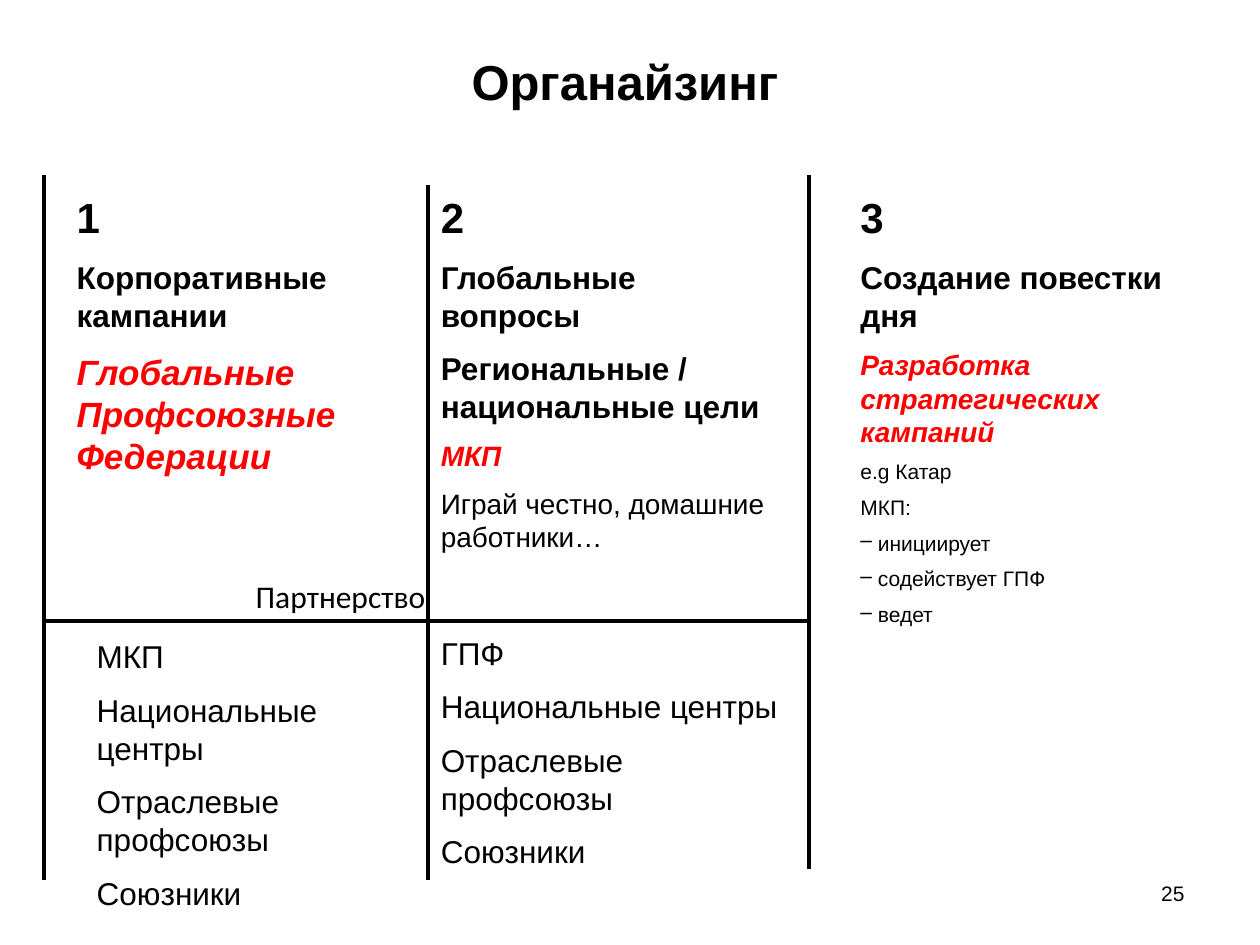
from dataclasses import dataclass

from lxml.etree import SubElement
from pptx import Presentation
from pptx.dml.color import RGBColor
from pptx.enum.shapes import MSO_CONNECTOR
from pptx.enum.text import MSO_ANCHOR, PP_ALIGN
from pptx.oxml.ns import qn
from pptx.util import Pt

COLORS = {"ink": "000000", "accent": "FF0000", "paper": "FFFFFF"}
BULLET_INDENT = 10


@dataclass(frozen=True)
class Line:
    text: str
    size: float
    bold: bool = False
    italic: bool = False
    color: str = "ink"
    bullet: str = ""


@dataclass(frozen=True)
class Block:
    left: float
    top: float
    width: float
    height: float
    lines: tuple[Line, ...]
    font: str = "Arial"
    align: PP_ALIGN = PP_ALIGN.LEFT
    anchor: MSO_ANCHOR = MSO_ANCHOR.TOP
    wrap: bool = True


@dataclass(frozen=True)
class Rule:
    x1: float
    y1: float
    x2: float
    y2: float


def heading(text: str, size: float = 18) -> Line:
    return Line(text, size, bold=True)


def owner(text: str, size: float = 16) -> Line:
    return Line(text, size, bold=True, italic=True, color="accent")


def partners(first: str) -> tuple[Line, ...]:
    names = (first, "Национальные центры", "Отраслевые профсоюзы", "Союзники")
    return tuple(Line(name, 18) for name in names)


def add_bullet(paragraph, char: str) -> None:
    properties = paragraph._p.get_or_add_pPr()
    properties.set("marL", str(Pt(BULLET_INDENT)))
    properties.set("indent", str(-Pt(BULLET_INDENT)))
    SubElement(properties, qn("a:buChar")).set("char", char)


def draw_block(slide, block: Block) -> None:
    box = slide.shapes.add_textbox(
        Pt(block.left), Pt(block.top), Pt(block.width), Pt(block.height))
    frame = box.text_frame
    frame.word_wrap = block.wrap
    frame.vertical_anchor = block.anchor
    for index, line in enumerate(block.lines):
        paragraph = frame.add_paragraph() if index else frame.paragraphs[0]
        paragraph.alignment = block.align
        if index:
            paragraph.space_before = Pt(line.size / 2)
        if line.bullet:
            add_bullet(paragraph, line.bullet)
        run = paragraph.add_run()
        run.text = line.text
        run.font.name = block.font
        run.font.size = Pt(line.size)
        run.font.bold = line.bold
        run.font.italic = line.italic
        run.font.color.rgb = RGBColor.from_string(COLORS[line.color])


def draw_rule(slide, rule: Rule) -> None:
    connector = slide.shapes.add_connector(
        MSO_CONNECTOR.STRAIGHT,
        Pt(rule.x1), Pt(rule.y1), Pt(rule.x2), Pt(rule.y2))
    connector.line.color.rgb = RGBColor.from_string(COLORS["ink"])
    connector.line.width = Pt(2.25)
    SubElement(connector._element.spPr, qn("a:effectLst"))


# Shared grid lines of the columns
COLUMN_TOP = 106
LEFT_EDGE, MIDDLE, RIGHT_EDGE = 25.2, 244.8, 462.2
DIVIDER = 355

TITLE = Block(76.3, 26, 561.6, 41, (heading("Органайзинг", 28),),
              align=PP_ALIGN.CENTER)
PAGE_NUMBER = Block(516.2, 491.8, 167.8, 37.4, (Line("25", 12),),
                    align=PP_ALIGN.RIGHT, anchor=MSO_ANCHOR.MIDDLE)
PARTNERSHIP = Block(139, 326.2, 116.6, 28.8, (Line("Партнерство", 18),),
                    font="Calibri", wrap=False)

CAMPAIGNS = Block(36.7, COLUMN_TOP, 209.5, 175.7, (
    heading("1", 24),
    heading("Корпоративные кампании"),
    owner("Глобальные Профсоюзные Федерации", 20),
))
GLOBAL_ISSUES = Block(MIDDLE, COLUMN_TOP, 200.2, 432, (
    heading("2", 24),
    heading("Глобальные вопросы"),
    heading("Региональные / национальные цели"),
    owner("МКП"),
    Line("Играй честно, домашние работники…", 16),
))
AGENDA = Block(484.6, COLUMN_TOP, 204.5, 267.8, (
    heading("3", 24),
    heading("Создание повестки дня"),
    owner("Разработка стратегических кампаний"),
    Line("e.g Катар", 12),
    Line("МКП:", 12),
    *(Line(role, 12, bullet="–")
      for role in ("инициирует", "содействует ГПФ", "ведет")),
))
CAMPAIGN_PARTNERS = Block(48.2, 360.7, 181.4, 170.6, partners("МКП"))
ISSUE_PARTNERS = Block(MIDDLE, 358.6, 215.3, 149, partners("ГПФ"))

BLOCKS = (PAGE_NUMBER, TITLE, CAMPAIGNS, CAMPAIGN_PARTNERS, GLOBAL_ISSUES,
          ISSUE_PARTNERS, AGENDA)
RULES = (
    Rule(LEFT_EDGE, DIVIDER, RIGHT_EDGE, DIVIDER),
    Rule(RIGHT_EDGE, 100, RIGHT_EDGE, 496.8),
    Rule(MIDDLE, COLUMN_TOP, MIDDLE, 502.6),
    Rule(LEFT_EDGE, 100, LEFT_EDGE, 502.6),
)


def main() -> None:
    deck = Presentation()
    deck.slide_width, deck.slide_height = Pt(720), Pt(540)
    slide = deck.slides.add_slide(deck.slide_layouts[6])
    background = slide.background.fill
    background.solid()
    background.fore_color.rgb = RGBColor.from_string(COLORS["paper"])

    # Column texts, then the dividing lines, then the label on the divider
    for block in BLOCKS:
        draw_block(slide, block)
    for rule in RULES:
        draw_rule(slide, rule)
    draw_block(slide, PARTNERSHIP)

    deck.save("out.pptx")


if __name__ == "__main__":
    main()
